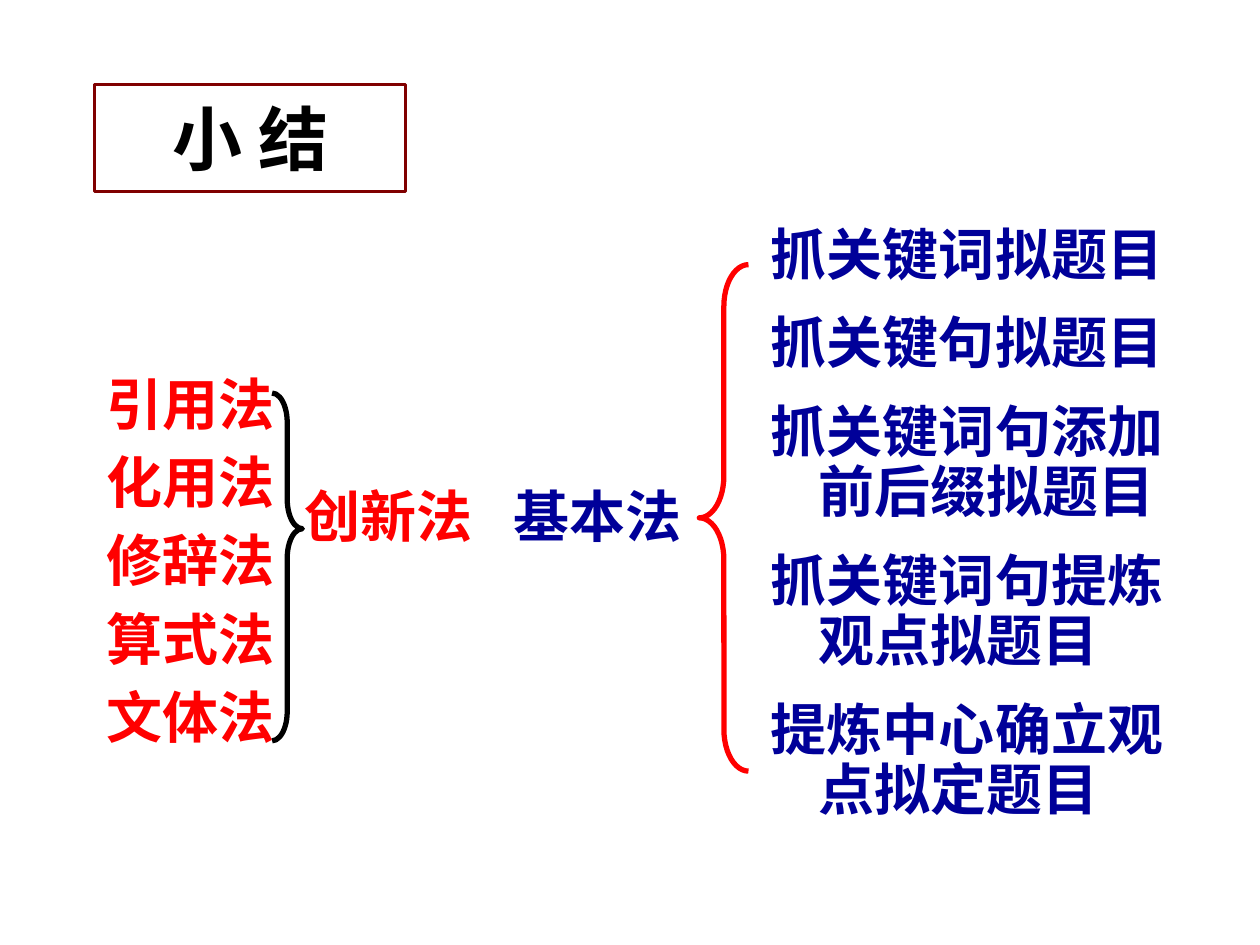
from pptx import Presentation
from pptx.dml.color import RGBColor
from pptx.enum.shapes import MSO_SHAPE as SHAPE
from pptx.enum.text import MSO_ANCHOR as ANCHOR, PP_ALIGN as ALIGN
from pptx.util import Inches, Pt

BLACK = RGBColor(0x00, 0x00, 0x00)
MAROON = RGBColor(0x80, 0x00, 0x00)
RED = RGBColor(0xFF, 0x00, 0x00)
NAVY = RGBColor(0x00, 0x00, 0x99)
SERIF, SANS = "Times New Roman", "Arial"

prs = Presentation()
prs.slide_width, prs.slide_height = Inches(10), Inches(7.5)
s = prs.slides.add_slide(prs.slide_layouts[6])
COL, ROW = prs.slide_width / 100, prs.slide_height / 75
HANG = Inches(0.38)


def place(x, y, w, h):
    """Turn columns and rows of the grid into slide lengths."""
    return int(x * COL), int(y * ROW), int(w * COL), int(h * ROW)


def write(p, text, size, name, color):
    r = p.add_run()
    r.text = text
    for key, value in dict(size=Pt(size), name=name, bold=True).items():
        setattr(r.font, key, value)
    r.font.color.rgb = color


# Title frame and the two braces
outlines = [
    (SHAPE.RECTANGLE, (7.5, 6.7, 24.7, 8.5), MAROON, 2, ()),
    (SHAPE.RIGHT_BRACE, (21.6, 31.2, 2.4, 27.6), BLACK, 3, (0.97, 0.39)),
    (SHAPE.LEFT_BRACE, (55.5, 21, 3.9, 40.2), RED, 3, (0.85, 0.5)),
]
for kind, box, color, width, adjustments in outlines:
    sp = s.shapes.add_shape(kind, *place(*box))
    sp.shadow.inherit = False
    sp.fill.background()
    sp.line.color.rgb = color
    sp.line.width = Pt(width)
    for i, value in enumerate(adjustments):
        sp.adjustments[i] = value
    if kind == SHAPE.RECTANGLE:
        tf = sp.text_frame
        tf.vertical_anchor = ANCHOR.MIDDLE
        tf.paragraphs[0].alignment = ALIGN.CENTER
        write(tf.paragraphs[0], "小 结", 40, SERIF, BLACK)

# Method names and their branches
innovative = ["引用法", "化用法", "修辞法", "算式法", "文体法"]
basic = ["抓关键词拟题目", "抓关键句拟题目", "抓关键词句添加前后缀拟题目",
         "抓关键词句提炼观点拟题目", "提炼中心确立观点拟定题目"]
texts = [
    (innovative, (7.5, 28.8, 16, 32), SERIF, RED, 1, 6.4),
    (["创新法"], (23.2, 38.3, 16.5, 5.8), SANS, RED, 0.9, 16),
    (["基本法"], (39.8, 38.3, 15.8, 5.8), SANS, NAVY, 0.9, 16),
    (basic, (60.2, 17.5, 36.2, 50), SANS, NAVY, 0.9, 16),
]
for lines, box, name, color, spacing, before in texts:
    tf = s.shapes.add_textbox(*place(*box)).text_frame
    tf.word_wrap = True
    for i, line in enumerate(lines):
        p = tf.add_paragraph() if i else tf.paragraphs[0]
        p.line_spacing = spacing
        p.space_before = Pt(before if i else 0)
        pPr = p._p.get_or_add_pPr()
        pPr.set("marL", str(HANG))
        pPr.set("indent", str(-HANG))
        write(p, line, 32, name, color)

prs.save("out.pptx")
